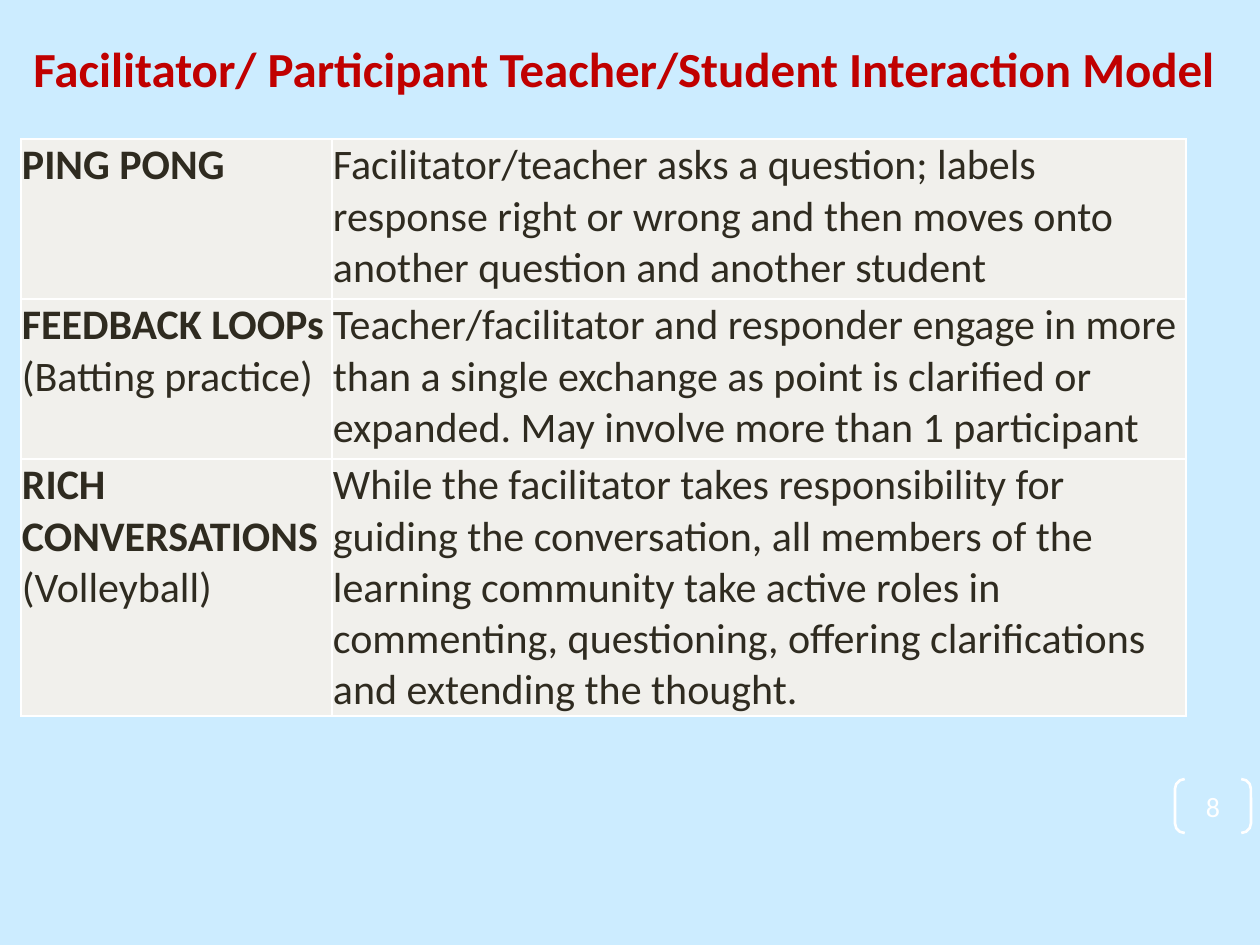
from dataclasses import dataclass

from lxml import etree
from pptx import Presentation
from pptx.dml.color import RGBColor
from pptx.enum.shapes import MSO_SHAPE
from pptx.enum.text import MSO_ANCHOR, MSO_AUTO_SIZE, PP_ALIGN
from pptx.oxml.ns import qn
from pptx.util import Pt

EMU_PER_PX = 914400 / 126
BRACKET_PAIR = MSO_SHAPE.DOUBLE_BRACKET
MIDDLE = MSO_ANCHOR.MIDDLE
CENTER = PP_ALIGN.CENTER
FIT_SHAPE = MSO_AUTO_SIZE.SHAPE_TO_FIT_TEXT
FONT = "Calibri"
COLORS = {
    "background": "CCECFF",
    "title": "C00000",
    "text": "2F2B20",
    "cell": "F1F0EC",
    "white": "FFFFFF",
}
COLUMN_WIDTHS = (311, 854)
ROW_HEIGHTS = (160, 160, 214)
BORDER_SIDES = ("a:lnL", "a:lnR", "a:lnT", "a:lnB")


@dataclass(frozen=True)
class Interaction:
    name: str
    analogy: str
    description: str


INTERACTIONS = (
    Interaction(
        "PING PONG",
        "",
        "Facilitator/teacher asks a question; labels response right or wrong "
        "and then moves onto another question and another student",
    ),
    Interaction(
        "FEEDBACK LOOPs ",
        "(Batting practice)",
        "Teacher/facilitator and responder engage in more than a single exchange "
        "as point is clarified or expanded. May involve more than 1 participant",
    ),
    Interaction(
        "RICH CONVERSATIONS ",
        "(Volleyball)",
        "While the facilitator takes responsibility for guiding the conversation, "
        "all members of the learning community take active roles in commenting, "
        "questioning, offering clarifications and extending the thought.",
    ),
)


def px(length: int) -> int:
    return round(length * EMU_PER_PX)


def color(name: str) -> RGBColor:
    return RGBColor.from_string(COLORS[name])


def add_run(paragraph, text: str, size: int, color_name: str, bold: bool = False) -> None:
    run = paragraph.add_run()
    run.text = text
    run.font.name = FONT
    run.font.size = Pt(size)
    run.font.bold = bold
    run.font.color.rgb = color(color_name)


def add_borders(cell) -> None:
    properties = cell._tc.get_or_add_tcPr()
    for position, side in enumerate(BORDER_SIDES):
        border = etree.Element(qn(side), w=str(Pt(1)))
        fill = etree.SubElement(border, qn("a:solidFill"))
        etree.SubElement(fill, qn("a:srgbClr"), val=COLORS["white"])
        properties.insert(position, border)


def fill_cell(cell, parts: tuple[tuple[str, bool], ...]) -> None:
    cell.margin_left = cell.margin_right = cell.margin_top = px(1)
    cell.margin_bottom = 0
    cell.fill.solid()
    cell.fill.fore_color.rgb = color("cell")
    add_borders(cell)
    for text, bold in parts:
        if text:
            add_run(cell.text_frame.paragraphs[0], text, 24, "text", bold)


def add_page_number(slide, number: str) -> None:
    bracket = slide.shapes.add_shape(BRACKET_PAIR, px(1175), px(779), px(76), px(54))
    bracket.adjustments[0] = 0.18
    bracket.shadow.inherit = False
    bracket.fill.background()
    bracket.line.color.rgb = color("white")
    bracket.line.width = Pt(1.5)
    frame = bracket.text_frame
    frame.margin_left = frame.margin_right = frame.margin_top = frame.margin_bottom = 0
    frame.vertical_anchor = MIDDLE
    frame.paragraphs[0].alignment = CENTER
    add_run(frame.paragraphs[0], number, 16, "white")


def add_interactions(slide) -> None:
    table = slide.shapes.add_table(
        len(ROW_HEIGHTS), len(COLUMN_WIDTHS),
        px(21), px(139), px(sum(COLUMN_WIDTHS)), px(sum(ROW_HEIGHTS)),
    ).table
    table.first_row = False
    table.horz_banding = False
    for column, width in zip(table.columns, COLUMN_WIDTHS):
        column.width = px(width)
    for row, height, interaction in zip(table.rows, ROW_HEIGHTS, INTERACTIONS):
        row.height = px(height)
        name_cell, description_cell = row.cells
        fill_cell(name_cell, ((interaction.name, True), (interaction.analogy, False)))
        fill_cell(description_cell, ((interaction.description, False),))


def add_title(slide, text: str) -> None:
    title = slide.shapes.add_textbox(px(21), px(32), px(1222), px(72))
    title.text_frame.word_wrap = False
    title.text_frame.auto_size = FIT_SHAPE
    add_run(title.text_frame.paragraphs[0], text, 28, "title", True)


def main() -> None:
    presentation = Presentation()
    presentation.slide_width = px(1260)
    presentation.slide_height = px(945)
    slide = presentation.slides.add_slide(presentation.slide_layouts[6])
    slide.background.fill.solid()
    slide.background.fill.fore_color.rgb = color("background")
    add_page_number(slide, "8")
    add_interactions(slide)
    add_title(slide, "Facilitator/ Participant Teacher/Student Interaction Model")
    presentation.save("out.pptx")


if __name__ == "__main__":
    main()
